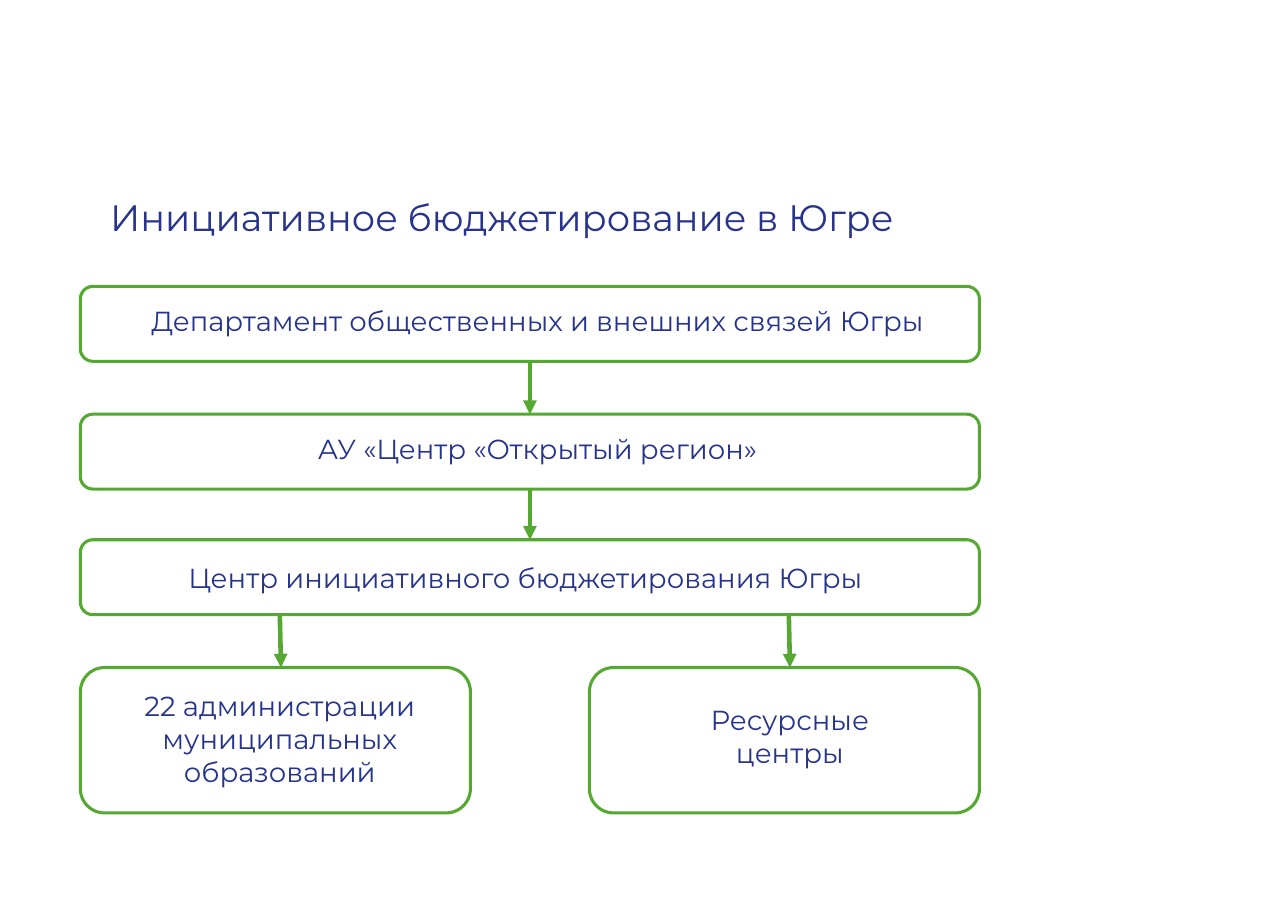
from lxml.etree import SubElement
from pptx import Presentation
from pptx.dml.color import RGBColor
from pptx.enum.shapes import MSO_CONNECTOR as LINE, MSO_SHAPE as SHAPE
from pptx.enum.text import MSO_ANCHOR as ANCHOR, PP_ALIGN as ALIGN
from pptx.oxml.ns import qn
from pptx.util import Pt

PX = 9144  # 100 px to the inch
GREEN = RGBColor(0x55, 0xA9, 0x32)
BLUE = RGBColor(0x27, 0x34, 0x8B)
NAVY = RGBColor(0x28, 0x34, 0x8B)
FONT = "Montserrat"
LEFT, WIDE, HALF = 73, 816, 354
LOW, TALL = 68, 132
CURVE = 0.05  # share of the height that round corners take from the text

# Text, left, top, width, height, then text inset, shift and drop
TIERS = [
    ("Департамент общественных и внешних связей Югры",
     LEFT, 260, WIDE, LOW, 35, 7, 16),
    ("АУ «Центр «Открытый регион»",
     LEFT, 376, WIDE, LOW, 35, 7, 16),
    ("Центр инициативного бюджетирования Югры",
     LEFT, 490, WIDE, LOW, 35, -4, 19),
]
UNITS = [
    ("22 администрации муниципальных образований",
     LEFT, 606, HALF, TALL, 15, 4, 20),
    ("Ресурсные центры",
     LEFT + WIDE - HALF, 606, HALF, TALL, 64, 5, 33),
]


def px(*nums):
    return [num * PX for num in nums]


def write(frame, text, size, color, align, pads):
    frame.word_wrap = True
    frame.vertical_anchor = ANCHOR.TOP
    (frame.margin_left, frame.margin_top,
     frame.margin_right, frame.margin_bottom) = px(*pads)
    frame.text = text
    para = frame.paragraphs[0]
    para.alignment = align
    para.space_before = Pt(0)
    para.line_spacing = 1.0
    para.font.name = FONT
    para.font.size = Pt(size)
    para.font.color.rgb = color


def add_title(slide, text):
    title = slide.shapes.title
    title.left, title.top, title.width, title.height = px(89, 171, 787, 55)
    write(title.text_frame, text, 24, NAVY, ALIGN.LEFT, (11, 6, 11, 6))


def add_box(slide, text, left, top, width, height, inset, shift, drop):
    box = slide.shapes.add_shape(SHAPE.ROUNDED_RECTANGLE,
                                 *px(left, top, width, height))
    box.shadow.inherit = False
    box.fill.background()
    box.line.color.rgb = GREEN
    box.line.width = Pt(2)
    trim = round(height * CURVE)
    pads = (inset + shift - trim, drop - trim, inset - shift - trim, 0)
    write(box.text_frame, text, 18, BLUE, ALIGN.CENTER, pads)
    return box


def add_arrow(slide, *ends):
    arrow = slide.shapes.add_connector(LINE.STRAIGHT, *px(*ends))
    arrow.line.color.rgb = GREEN
    arrow.line.width = Pt(3)
    SubElement(arrow.line._get_or_add_ln(), qn("a:tailEnd"), type="triangle")
    SubElement(arrow._element.spPr, qn("a:effectLst"))
    return arrow


def main():
    deck = Presentation()
    deck.slide_width, deck.slide_height = px(1169, 827)
    slide = deck.slides.add_slide(deck.slide_layouts[5])
    add_title(slide, "Инициативное бюджетирование в Югре")

    # Three tiers, each leading to the next
    tiers = [add_box(slide, *tier) for tier in TIERS]
    for above, below in zip(tiers, tiers[1:]):
        arrow = add_arrow(slide, 0, 0, 0, 0)
        arrow.begin_connect(above, 2)
        arrow.end_connect(below, 0)

    # Two units under the last tier
    for unit in UNITS:
        add_box(slide, *unit)
        mid = unit[1] + HALF // 2 + 4
        add_arrow(slide, mid, 559, mid + 1, 606)

    deck.save("out.pptx")


if __name__ == "__main__":
    main()
